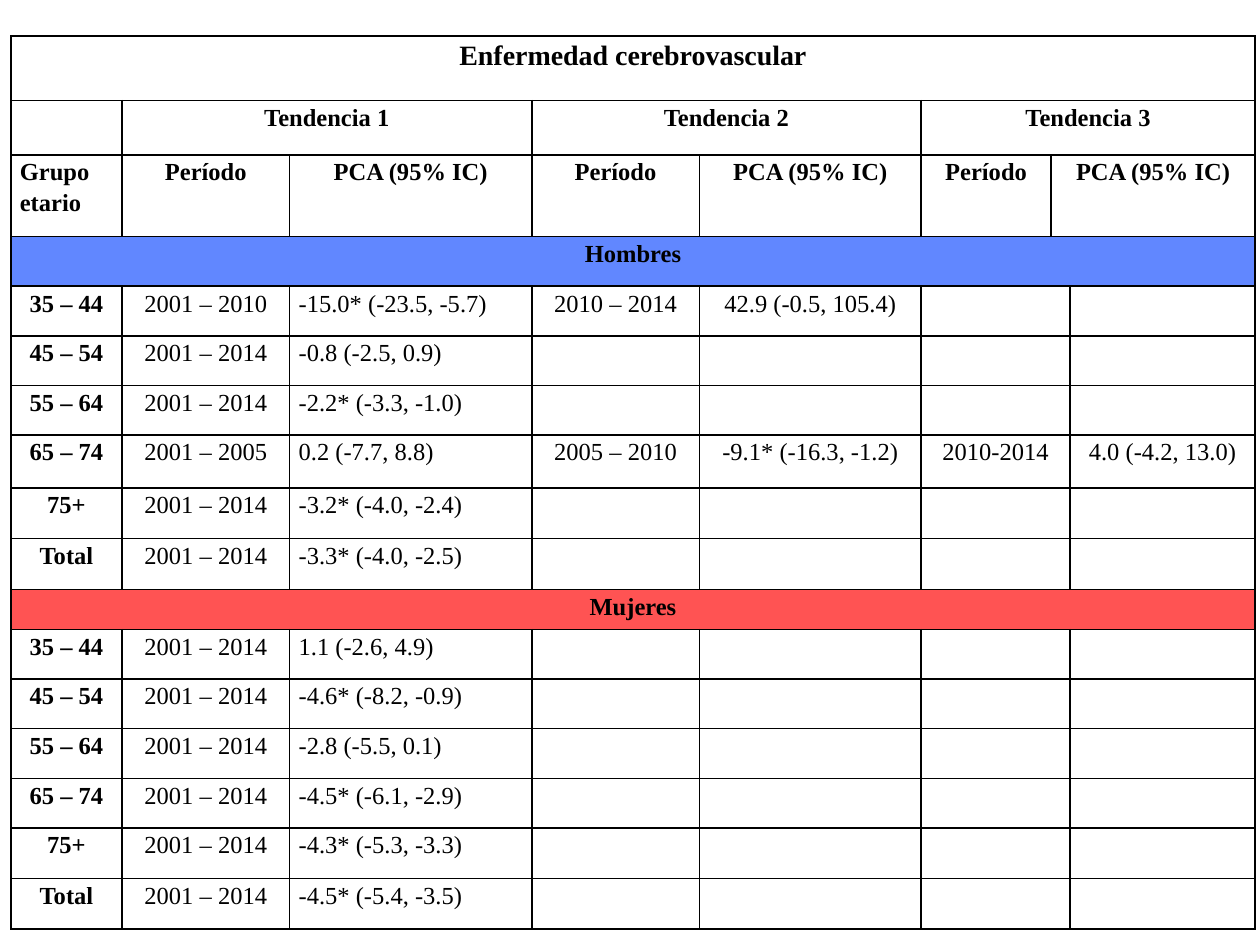
from lxml import etree
from pptx import Presentation
from pptx.dml.color import RGBColor
from pptx.enum.text import PP_ALIGN
from pptx.oxml.ns import qn
from pptx.util import Cm, Pt

BLACK = RGBColor(0x00, 0x00, 0x00)
WHITE = RGBColor(0xFF, 0xFF, 0xFF)
BLUE = RGBColor(0x61, 0x87, 0xFF)
RED = RGBColor(0xFF, 0x53, 0x53)

COLUMN_WIDTHS = [2.24, 3.38, 4.88, 3.38, 4.47, 2.62, 0.38, 3.73]
HEADER_HEIGHTS = [1.3, 1.09, 1.65]
MEN_HEIGHTS = [1, 1, 1, 1, 1.07, 1.02, 1.02]
WOMEN_HEIGHTS = [0.81, 1, 1, 1, 1, 1.02, 1.02]
ROW_HEIGHTS = HEADER_HEIGHTS + MEN_HEIGHTS + WOMEN_HEIGHTS

AGE_GROUPS = ["35 – 44", "45 – 54", "55 – 64", "65 – 74", "75+", "Total"]
FULL_PERIOD = "2001 – 2014"
# Each age group holds period and PCA for up to three trends
MEN = [
    ["2001 – 2010", "-15.0* (-23.5, -5.7)", "2010 – 2014", "42.9 (-0.5, 105.4)"],
    [FULL_PERIOD, "-0.8 (-2.5, 0.9)"],
    [FULL_PERIOD, "-2.2* (-3.3, -1.0)"],
    ["2001 – 2005", "0.2 (-7.7, 8.8)", "2005 – 2010", "-9.1* (-16.3, -1.2)",
     "2010-2014", "4.0 (-4.2, 13.0)"],
    [FULL_PERIOD, "-3.2* (-4.0, -2.4)"],
    [FULL_PERIOD, "-3.3* (-4.0, -2.5)"],
]
WOMEN = [[FULL_PERIOD, pca] for pca in (
    "1.1 (-2.6, 4.9)", "-4.6* (-8.2, -0.9)", "-2.8 (-5.5, 0.1)",
    "-4.5* (-6.1, -2.9)", "-4.3* (-5.3, -3.3)", "-4.5* (-5.4, -3.5)")]
SECTIONS = [("Hombres", BLUE, MEN), ("Mujeres", RED, WOMEN)]
DATA_COLUMNS = [1, 2, 3, 4, 5, 7]
HEADER_COLUMNS = [1, 2, 3, 4, 5, 6]


def add_borders(cell):
    properties = cell._tc.get_or_add_tcPr()
    for position, side in enumerate(("lnL", "lnR", "lnT", "lnB")):
        line = etree.Element(qn(f"a:{side}"), w=str(Pt(1)))
        fill = etree.SubElement(line, qn("a:solidFill"))
        etree.SubElement(fill, qn("a:srgbClr"), val=str(BLACK))
        properties.insert(position, line)


def write(cell, wording, bold=True, size=14, align=PP_ALIGN.CENTER):
    cell.text = wording
    paragraph = cell.text_frame.paragraphs[0]
    paragraph.alignment = align
    paragraph.line_spacing = 1.15
    paragraph.space_after = Pt(10)
    paragraph.font.name = "Times New Roman"
    paragraph.font.size = Pt(size)
    paragraph.font.bold = bold
    paragraph.font.color.rgb = BLACK


presentation = Presentation()
presentation.slide_width = Cm(25.4)
presentation.slide_height = Cm(19.05)
slide = presentation.slides.add_slide(presentation.slide_layouts[6])

trends = slide.shapes.add_table(
    len(ROW_HEIGHTS), len(COLUMN_WIDTHS), Cm(0.22), Cm(0.73),
    Cm(sum(COLUMN_WIDTHS)), Cm(sum(ROW_HEIGHTS))).table
trends.first_row = False
trends.horz_banding = False
for column, width in zip(trends.columns, COLUMN_WIDTHS):
    column.width = Cm(width)
for row, height in zip(trends.rows, ROW_HEIGHTS):
    row.height = Cm(height)

for cell in trends.iter_cells():
    cell.margin_left = cell.margin_right = Cm(0.18)
    cell.margin_top = cell.margin_bottom = 0
    cell.fill.solid()
    cell.fill.fore_color.rgb = WHITE
    add_borders(cell)

# Headings
trends.cell(0, 0).merge(trends.cell(0, 7))
write(trends.cell(0, 0), "Enfermedad cerebrovascular", size=16)
for number, (first, last) in enumerate([(1, 2), (3, 4), (5, 7)], start=1):
    trends.cell(1, first).merge(trends.cell(1, last))
    write(trends.cell(1, first), f"Tendencia {number}")
trends.cell(2, 6).merge(trends.cell(2, 7))
write(trends.cell(2, 0), "Grupo etario", align=PP_ALIGN.LEFT)
for column, heading in zip(HEADER_COLUMNS, ["Período", "PCA (95% IC)"] * 3):
    write(trends.cell(2, column), heading)

# One banner and six age groups for each sex
row = len(HEADER_HEIGHTS)
for sex, color, results in SECTIONS:
    banner = trends.cell(row, 0)
    banner.merge(trends.cell(row, 7))
    banner.fill.fore_color.rgb = color
    write(banner, sex)
    for row, (age_group, values) in enumerate(zip(AGE_GROUPS, results), start=row + 1):
        trends.cell(row, 5).merge(trends.cell(row, 6))
        write(trends.cell(row, 0), age_group)
        for column, value in zip(DATA_COLUMNS, values):
            align = PP_ALIGN.LEFT if column == 2 else PP_ALIGN.CENTER
            write(trends.cell(row, column), value, bold=False, align=align)
    row += 1

presentation.save("out.pptx")
